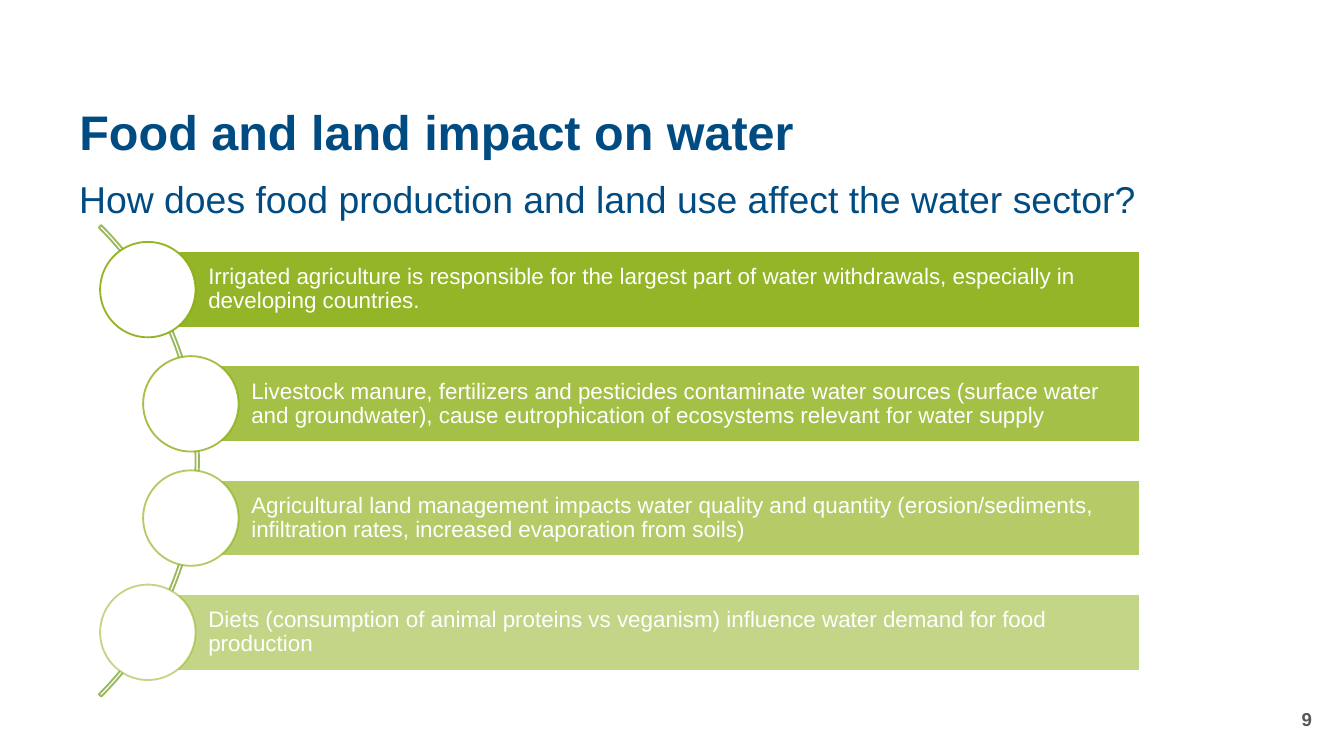
from lxml import etree
from pptx import Presentation
from pptx.dml.color import RGBColor
from pptx.enum.shapes import MSO_SHAPE
from pptx.enum.text import MSO_ANCHOR, PP_ALIGN
from pptx.oxml.ns import qn
from pptx.util import Inches, Pt

RECT, OVAL, ARC = MSO_SHAPE.RECTANGLE, MSO_SHAPE.OVAL, MSO_SHAPE.BLOCK_ARC
TOP, MIDDLE = MSO_ANCHOR.TOP, MSO_ANCHOR.MIDDLE
LEFT, RIGHT = PP_ALIGN.LEFT, PP_ALIGN.RIGHT

COLORS = {
    "navy": "004C82",
    "green": "89AE10",
    "arc": "9AB85E",
    "white": "FFFFFF",
    "grey": "575756",
}
FONT = "Arial"
IMPACTS = [
    ("Irrigated agriculture is responsible for the largest part of water "
     "withdrawals, especially in developing countries.", 0.35, 90),
    ("Livestock manure, fertilizers and pesticides contaminate water sources "
     "(surface water and groundwater), cause eutrophication of ecosystems "
     "relevant for water supply", 0.67, 77),
    ("Agricultural land management impacts water quality and quantity "
     "(erosion/sediments, infiltration rates, increased evaporation from soils)",
     0.67, 63),
    ("Diets (consumption of animal proteins vs veganism) influence water demand "
     "for food production", 0.35, 50),
]


def set_color(fill, color, alpha=100):
    """Make a fill solid in a palette colour with an opacity in percent."""
    fill.solid()
    fill.fore_color.rgb = RGBColor.from_string(COLORS[color])
    if alpha < 100:
        clr = fill._xPr.find(qn("a:solidFill"))[0]
        etree.SubElement(clr, qn("a:alpha"), val=str(alpha * 1000))


def write(sp, text, size=12, color="white", bold=False, align=LEFT, anchor=MIDDLE,
          spacing=0.9, insets=(0.1, 0.05, 0.1, 0.05)):
    """Put one formatted paragraph into a shape."""
    tf = sp.text_frame
    tf.word_wrap = True
    tf.vertical_anchor = anchor
    tf.margin_left, tf.margin_top, tf.margin_right, tf.margin_bottom = map(Inches, insets)
    p = tf.paragraphs[0]
    p.alignment = align
    p.line_spacing = spacing
    r = p.add_run()
    r.text = text
    r.font.name, r.font.size, r.font.bold = FONT, Pt(size), bold
    r.font.color.rgb = RGBColor.from_string(COLORS[color])


def add_shape(s, kind, x, y, w, h, fill, line, fill_alpha=100, line_alpha=100):
    """Add a flat preset shape with a one-point outline."""
    sp = s.shapes.add_shape(kind, *map(Inches, (x, y, w, h)))
    sp.shadow.inherit = False
    if fill:
        set_color(sp.fill, fill, fill_alpha)
    else:
        sp.fill.background()
    sp.line.width = Pt(1)
    set_color(sp.line.fill, line, line_alpha)
    return sp


def add_heading(s, x, y, w):
    """Place the title and the question below it."""
    title = s.shapes.title
    title.left, title.top, title.width, title.height = map(Inches, (x, y, w, 0.59))
    write(title, "Food and land impact on water", size=26, color="navy", bold=True)
    question = s.shapes.add_textbox(*map(Inches, (x, y + 0.64, w, 0.3)))
    write(question, "How does food production and land use affect the water sector?",
          size=20, color="navy", anchor=TOP, insets=(0.1, 0, 0.08, 0))


def add_impact_list(s, x, y, w, h):
    """Place bars and circles evenly along a curved spine."""
    bar_h, circle, arc = 0.57, 0.71, 4.96
    pitch = h / len(IMPACTS)
    spine = add_shape(s, ARC, x - 4.23, y + (h - arc) / 2, arc, arc, None, "arc")
    for i, value in enumerate((189, 27, 0.005)):
        spine.adjustments[i] = value
    for i, (text, indent, alpha) in enumerate(IMPACTS):
        left, middle = x + indent, y + (i + 0.5) * pitch
        bar = add_shape(s, RECT, left, middle - bar_h / 2, w - indent, bar_h,
                        "green", "white", fill_alpha=alpha)
        write(bar, text, insets=(0.45, 0.03, 0.03, 0.03))
        add_shape(s, OVAL, left - circle / 2, middle - circle / 2, circle, circle,
                  "white", "green", line_alpha=alpha)


def add_page_number(s, x, y, w, h):
    """Place the page number at the lower right."""
    sp = s.shapes.add_textbox(*map(Inches, (x, y, w, h)))
    write(sp, "9", size=10, color="grey", bold=True, align=RIGHT, spacing=1.0)


def main():
    """Build and save the slide."""
    prs = Presentation()
    prs.slide_width = Inches(10)
    prs.slide_height = prs.slide_width * 9 // 16
    s = prs.slides.add_slide(prs.slide_layouts[5])
    add_heading(s, 0.49, 0.71, 9.37)
    add_impact_list(s, 0.75, 1.73, 7.73, 3.4)
    add_page_number(s, 7.61, 5.2, 2.25, 0.3)
    prs.save("out.pptx")


if __name__ == "__main__":
    main()
